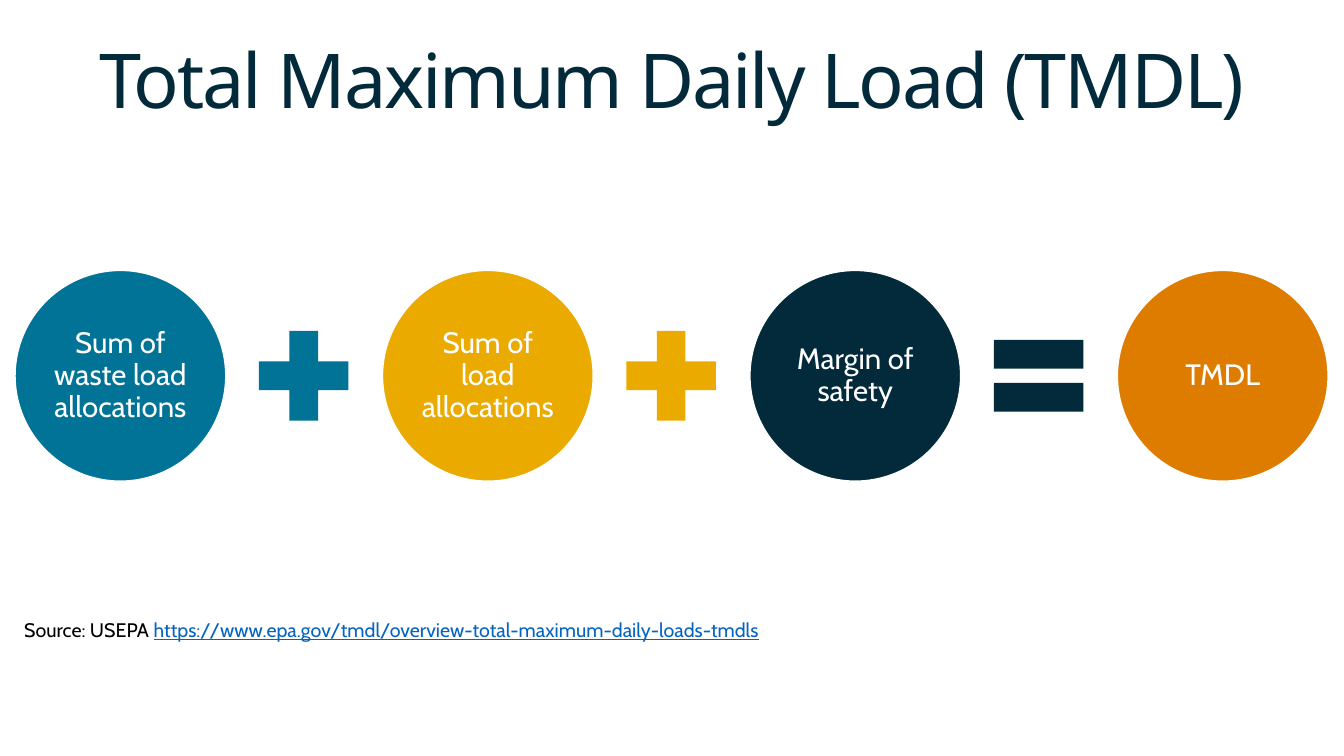
from pptx import Presentation
from pptx.dml.color import RGBColor
from pptx.enum.shapes import MSO_SHAPE
from pptx.enum.text import MSO_ANCHOR, PP_ALIGN
from pptx.util import Cm, Pt

TEAL, GOLD, NAVY, ORANGE = "007396", "EAAA00", "022A3A", "DE7C00"
WHITE, BLACK, BLUE = "FFFFFF", "000000", "0563C1"
HEAD, BODY = "Noto Sans", "Cabin"

LEFT, STEP, MID = 0.38, 9.26, 9.47
DISC, SIGN = 5.31, 3.07
SHIFT = 5.74  # from the left of a disc to the left of its sign

TERMS = [
    ("Sum of waste load allocations", TEAL, MSO_SHAPE.MATH_PLUS),
    ("Sum of load allocations", GOLD, MSO_SHAPE.MATH_PLUS),
    ("Margin of safety", NAVY, MSO_SHAPE.MATH_EQUAL),
    ("TMDL", ORANGE, None),
]


def color(code):
    return RGBColor.from_string(code)


class Board:
    def __init__(self, slide):
        self.slide = slide

    def run(self, para, text, size, code, face=BODY):
        run = para.add_run()
        run.text = text
        run.font.size = Pt(size)
        run.font.name = face
        run.font.color.rgb = color(code)
        return run

    def box(self, left, top, width, height, anchor=MSO_ANCHOR.TOP):
        """Add a wrapping text box and return its first paragraph."""
        area = self.slide.shapes.add_textbox(Cm(left), Cm(top), Cm(width), Cm(height))
        frame = area.text_frame
        frame.word_wrap = True
        frame.vertical_anchor = anchor
        return frame.paragraphs[0]

    def shape(self, kind, left, size, code):
        """Add a square shape centred on the row."""
        shape = self.slide.shapes.add_shape(
            kind, Cm(left), Cm(MID - size / 2), Cm(size), Cm(size))
        shape.shadow.inherit = False
        shape.fill.solid()
        shape.fill.fore_color.rgb = color(code)
        shape.line.fill.background()
        return shape

    def disc(self, left, text, code):
        disc = self.shape(MSO_SHAPE.OVAL, left, DISC, code)
        disc.line.color.rgb = color(WHITE)
        disc.line.width = Pt(1)
        frame = disc.text_frame
        frame.word_wrap = True
        frame.vertical_anchor = MSO_ANCHOR.MIDDLE
        frame.margin_left = frame.margin_right = Cm(0.08)
        frame.margin_top = frame.margin_bottom = Cm(0.08)
        para = frame.paragraphs[0]
        para.alignment = PP_ALIGN.CENTER
        para.line_spacing = 0.9
        self.run(para, text, 21, WHITE)


def main():
    deck = Presentation()
    deck.slide_width, deck.slide_height = Cm(33.87), Cm(19.05)
    board = Board(deck.slides.add_slide(deck.slide_layouts[6]))

    title = board.box(0, 0.48, 33.87, 3.28, MSO_ANCHOR.MIDDLE)
    title.alignment = PP_ALIGN.CENTER
    title.line_spacing = 0.9
    run = board.run(title, "Total Maximum Daily Load (TMDL)", 54, NAVY, HEAD)
    run.font._element.set("spc", "-150")

    for index, (text, code, sign) in enumerate(TERMS):
        left = LEFT + index * STEP
        board.disc(left, text, code)
        if sign is not None:
            board.shape(sign, left + SHIFT, SIGN, code)

    source = board.box(0.36, 15.44, 33.15, 1.07)
    board.run(source, "Source: USEPA ", 14, BLACK)
    link = "https://www.epa.gov/tmdl/overview-total-maximum-daily-loads-tmdls"
    board.run(source, link, 14, BLUE).font.underline = True

    deck.save("out.pptx")


if __name__ == "__main__":
    main()
